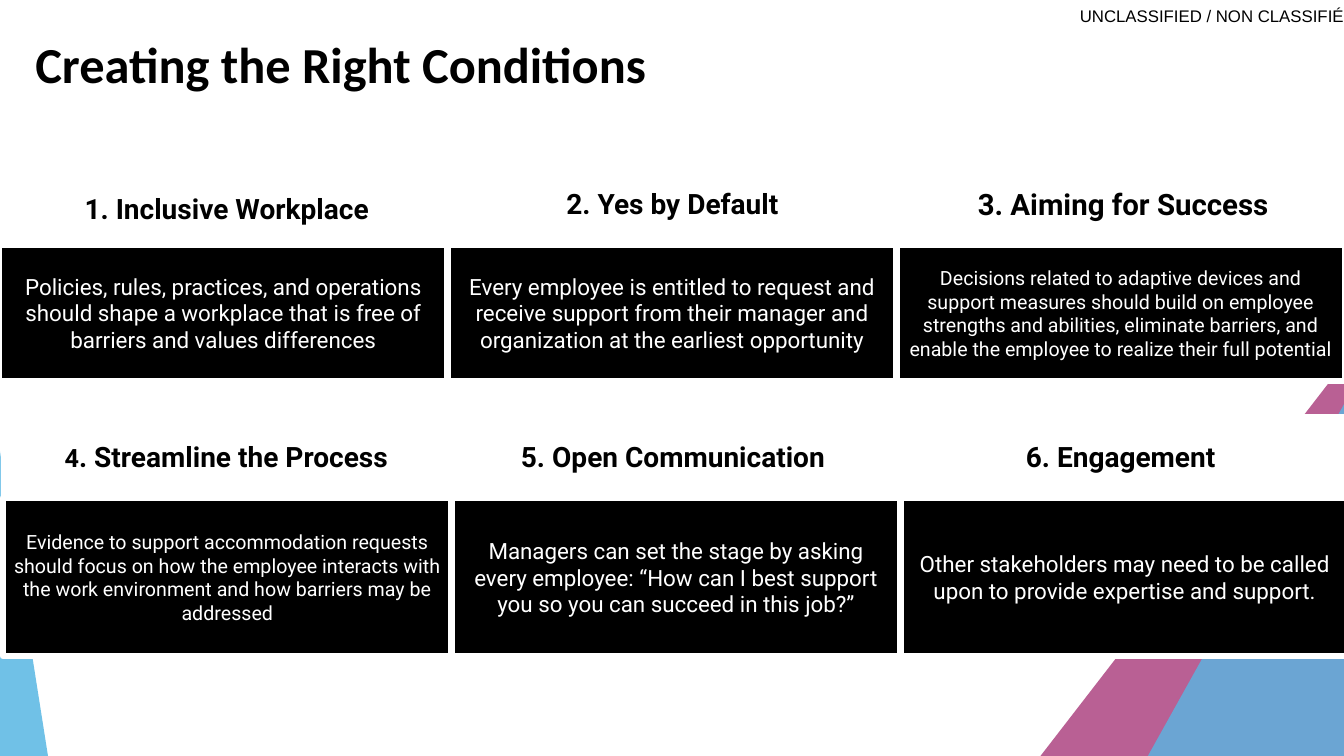
from lxml import etree
from pptx import Presentation
from pptx.dml.color import RGBColor
from pptx.enum.shapes import MSO_SHAPE
from pptx.enum.text import MSO_ANCHOR, PP_ALIGN
from pptx.oxml.ns import qn
from pptx.util import Emu, Pt

RECTANGLE = MSO_SHAPE.RECTANGLE
TRIANGLE = MSO_SHAPE.ISOSCELES_TRIANGLE
MIDDLE = MSO_ANCHOR.MIDDLE
LEFT, CENTER, RIGHT = PP_ALIGN.LEFT, PP_ALIGN.CENTER, PP_ALIGN.RIGHT

BLACK = RGBColor(0x00, 0x00, 0x00)
WHITE = RGBColor(0xFF, 0xFF, 0xFF)
PLUM = RGBColor(0x9E, 0x24, 0x6B)
SKY = RGBColor(0x58, 0xB7, 0xE3)

EMU_PER_PX = 9144
COLUMN_PITCH = 445

# Each condition: heading runs, heading left, top and width, body text, body size
ROWS = [
    ((-1, 243, 445, 135), 91, [
        ([("1. Inclusive Workplace", 20)], (0, 161, 450),
         "Policies, rules, practices, and operations should shape a workplace "
         "that is free of barriers and values differences", 16),
        ([("2. Yes by Default", 20)], (442, 156, 450),
         "Every employee is entitled to request and receive support from their "
         "manager and organization at the earliest opportunity", 16),
        ([("3. Aiming for Success", 21)], (889, 157, 450),
         "Decisions related to adaptive devices and support measures should "
         "build on employee strengths and abilities, eliminate barriers, and "
         "enable the employee to realize their full potential", 14),
    ]),
    ((3, 494, 445, 157), 83, [
        ([("4", 18), (". Streamline the Process", 20)], (1, 411, 447),
         "Evidence to support accommodation requests should focus on how the "
         "employee interacts with the work environment and how barriers may be "
         "addressed", 14),
        ([("5. Open Communication", 20)], (445, 411, 445),
         "Managers can set the stage by asking every employee: “How can I best "
         "support you so you can succeed in this job?”", 16),
        ([("6. Engagement", 20)], (889, 411, 445),
         "Other stakeholders may need to be called upon to provide expertise "
         "and support.", 16),
    ]),
]


def px(*lengths):
    """Turn whole pixels into EMU lengths."""
    return [Emu(length * EMU_PER_PX) for length in lengths]


def write_text(shape, runs, font="Roboto", color=BLACK, bold=False,
               align=CENTER, spacing=1.0):
    """Fill a shape with one paragraph of (text, size) runs."""
    frame = shape.text_frame
    frame.word_wrap = True
    frame.vertical_anchor = MIDDLE
    paragraph = frame.paragraphs[0]
    paragraph.alignment = align
    paragraph.line_spacing = spacing
    for text, size in runs:
        run = paragraph.add_run()
        run.text = text
        run.font.name = font
        run.font.size = Pt(size)
        run.font.bold = bold
        run.font.color.rgb = color


def add_filled(slide, kind, box, color, line_width=0):
    """Add a shape with a solid fill and an optional white outline."""
    shape = slide.shapes.add_shape(kind, *px(*box))
    shape.shadow.inherit = False
    shape.fill.solid()
    shape.fill.fore_color.rgb = color
    if line_width:
        shape.line.color.rgb = WHITE
        shape.line.width = Pt(line_width)
    else:
        shape.line.fill.background()
    return shape


def add_corner(slide, box, color, apex, opacity):
    """Add a translucent corner triangle with its apex at a share of the width."""
    triangle = add_filled(slide, TRIANGLE, box, color)
    triangle.adjustments[0] = apex
    color_element = next(triangle._element.spPr.iter(qn("a:srgbClr")))
    alpha = etree.SubElement(color_element, qn("a:alpha"))
    alpha.set("val", str(opacity * 1000))


def add_background(slide):
    """Add the decorative corners."""
    add_corner(slide, (1025, 359, 309, 400), PLUM, 1, 72)
    add_corner(slide, (1134, 401, 199, 357), SKY, 1, 80)
    add_corner(slide, (0, 448, 49, 311), SKY, 0, 85)


def add_classification(slide, box):
    """Add the classification marking."""
    marking = slide.shapes.add_textbox(*px(*box))
    frame = marking.text_frame
    frame.margin_left = frame.margin_right = 0
    frame.margin_top = frame.margin_bottom = 0
    write_text(marking, [("UNCLASSIFIED / NON CLASSIFIÉ", 12)],
               font="Arial", align=RIGHT)


def place_title(slide, box, text):
    """Move and format the title placeholder."""
    title = slide.shapes.title
    title.left, title.top, title.width, title.height = px(*box)
    write_text(title, [(text, 36)], font="Calibri", bold=True, align=LEFT,
               spacing=0.9)


def add_row(slide, box, heading_height, conditions):
    """Add a row of conditions, the first body filling the given box."""
    left, top, width, height = box
    for column, (heading_runs, place, text, size) in enumerate(conditions):
        heading = add_filled(slide, RECTANGLE, (*place, heading_height), WHITE)
        write_text(heading, heading_runs, bold=True)
        body_box = (left + column * COLUMN_PITCH, top, width, height)
        body = add_filled(slide, RECTANGLE, body_box, BLACK, line_width=4.5)
        write_text(body, [(text, size)], color=WHITE)


def main():
    """Build and save the presentation."""
    presentation = Presentation()
    presentation.slide_width, presentation.slide_height = px(1333, 750)
    slide = presentation.slides.add_slide(presentation.slide_layouts[5])
    add_background(slide)
    add_classification(slide, (1031, 0, 302, 31))
    place_title(slide, (25, 25, 1118, 84), "Creating the Right Conditions")
    for box, heading_height, conditions in ROWS:
        add_row(slide, box, heading_height, conditions)
    presentation.save("out.pptx")


if __name__ == "__main__":
    main()
